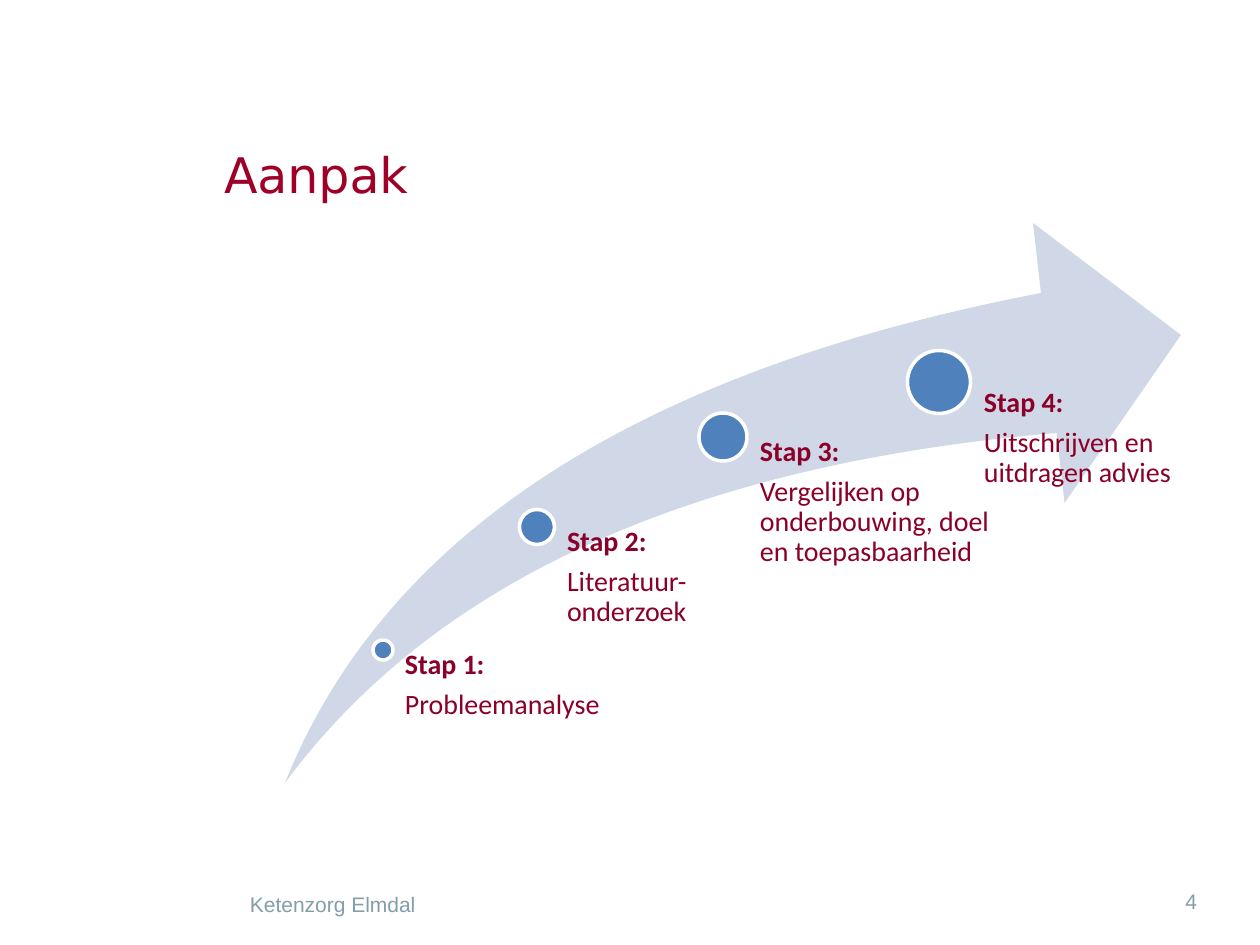
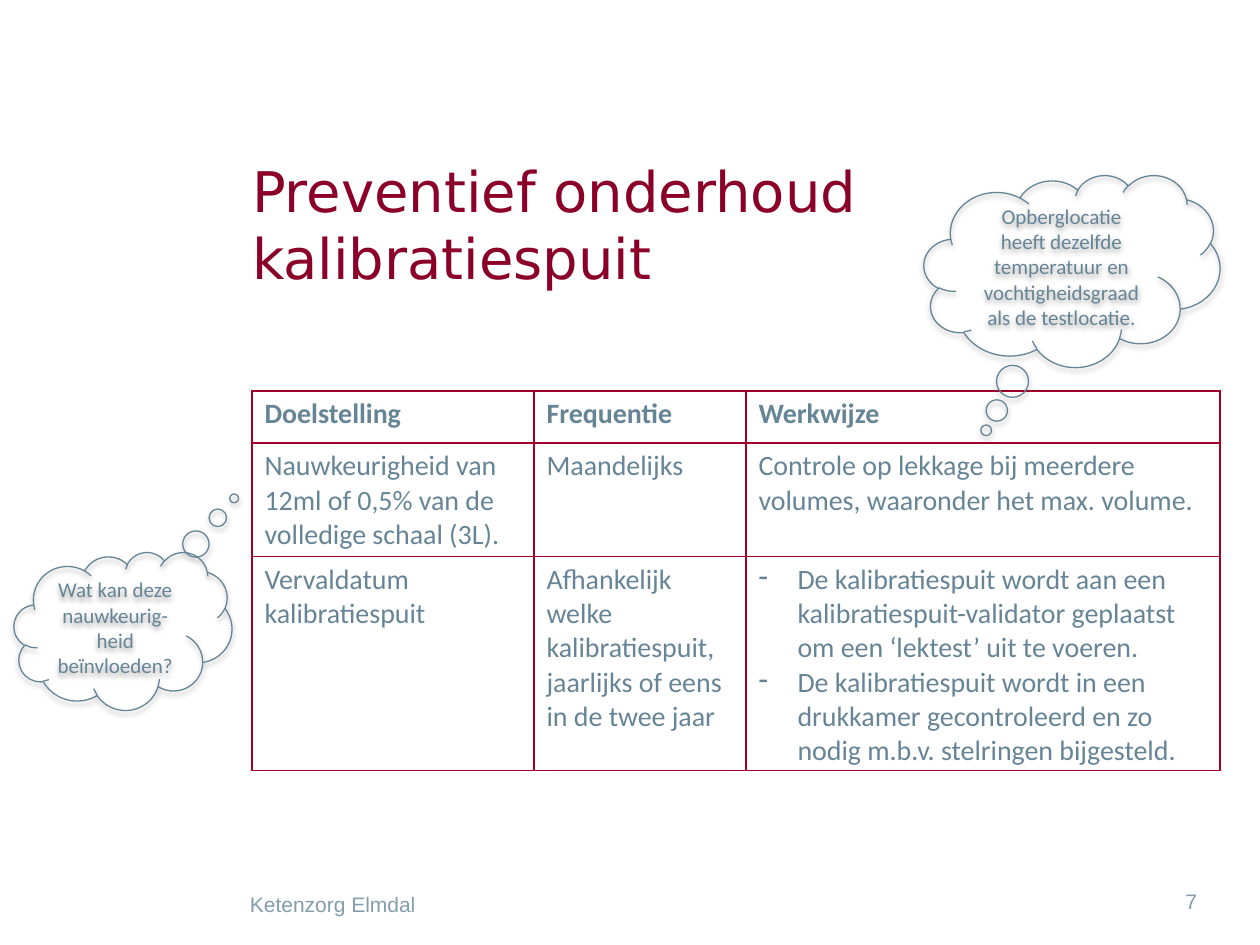
from lxml import etree
from pptx import Presentation
from pptx.dml.color import RGBColor
from pptx.enum.shapes import MSO_SHAPE
from pptx.enum.text import MSO_ANCHOR, MSO_AUTO_SIZE, PP_ALIGN
from pptx.oxml.ns import qn
from pptx.util import Emu, Pt

CRIMSON = RGBColor(0x9E, 0x00, 0x27)
WINE = RGBColor(0x8A, 0x00, 0x28)
SLATE = RGBColor(0x65, 0x85, 0x96)
FOOTER_GREY = RGBColor(0x82, 0x9D, 0xAB)
PALE_BLUE = RGBColor(0xD0, 0xD8, 0xE8)
DOT_BLUE = RGBColor(0x4F, 0x81, 0xBD)
WHITE = RGBColor(0xFF, 0xFF, 0xFF)

TITLE_FONT, BODY_FONT, FOOTER_FONT = "DejaVu Sans", "Calibri", "Arial"
TITLE_ONLY = 5
FOOTER = "Ketenzorg Elmdal"


def px(length):
    return Emu(round(length * 914400 / 126))


def box_emu(*box):
    return [px(length) for length in box]


def write(frame, *lines, size=16, font=BODY_FONT, color=SLATE, bold=False,
          bold_lead=False, align=PP_ALIGN.LEFT, anchor=MSO_ANCHOR.TOP,
          insets=None, spacing=None, after=None, dash_indent=None):
    """Fill a text frame, one paragraph per line; insets are in px."""
    frame.word_wrap = True
    frame.vertical_anchor = anchor
    if insets:
        (frame.margin_left, frame.margin_top,
         frame.margin_right, frame.margin_bottom) = box_emu(*insets)
    for index, line in enumerate(lines):
        paragraph = frame.add_paragraph() if index else frame.paragraphs[0]
        paragraph.text = line
        paragraph.alignment = align
        if spacing:
            paragraph.line_spacing = spacing
        if after:
            paragraph.space_after = after
        if dash_indent:
            properties = paragraph._p.get_or_add_pPr()
            properties.set("marL", str(px(dash_indent)))
            properties.set("indent", str(-px(dash_indent)))
            etree.SubElement(properties, qn("a:buChar"), char="-")
        for run in paragraph.runs:
            run.font.size = Pt(size)
            run.font.name = font
            run.font.color.rgb = color
            run.font.bold = bold or (bold_lead and index == 0)


def add_text(slide, box, *lines, **text_format):
    frame = slide.shapes.add_textbox(*box_emu(*box)).text_frame
    write(frame, *lines, **{"insets": (0, 0, 0, 0), **text_format})


def add_preset(slide, preset, box, fill=None, line=None, line_width=1):
    shape = slide.shapes.add_shape(preset, *box_emu(*box))
    shape.shadow.inherit = False
    if fill is None:
        shape.fill.background()
    else:
        shape.fill.solid()
        shape.fill.fore_color.rgb = fill
    if line is None:
        shape.line.fill.background()
    else:
        shape.line.color.rgb = line
        shape.line.width = Pt(line_width)
    return shape


def start_slide(deck, title, title_box, number, **title_format):
    """Title, footer and slide number."""
    slide = deck.slides.add_slide(deck.slide_layouts[TITLE_ONLY])
    heading = slide.shapes.title
    heading.left, heading.top, heading.width, heading.height = box_emu(*title_box)
    heading.text_frame.auto_size = MSO_AUTO_SIZE.NONE
    write(heading.text_frame, title, font=TITLE_FONT, insets=(0, 0, 0, 0),
          **title_format)
    footer_format = dict(size=12, font=FOOTER_FONT, color=FOOTER_GREY,
                         anchor=MSO_ANCHOR.MIDDLE)
    add_text(slide, (250, 879, 328, 50), FOOTER, **footer_format)
    add_text(slide, (903, 876, 294, 50), number, align=PP_ALIGN.RIGHT,
             **footer_format)
    return slide


def add_roadmap(slide, box, steps):
    """Swoosh arrow with growing dots, each with its step text."""
    left, top, width, height = box
    swoosh = add_preset(slide, MSO_SHAPE.from_xml("swooshArrow"), box, PALE_BLUE)
    swoosh.adjustments[0] = swoosh.adjustments[1] = 0.25
    for number, (x, y, diameter, text_drop, text_width, text) in enumerate(steps, 1):
        radius = diameter / 2
        add_preset(slide, MSO_SHAPE.OVAL,
                   (left + x - radius, top + y - radius, diameter, diameter),
                   DOT_BLUE, WHITE, 2)
        text_top = y + text_drop
        add_text(slide,
                 (left + x + 11, top + text_top, text_width, height - text_top),
                 f"Stap {number}:", text, color=WINE, bold_lead=True,
                 insets=(round(diameter * 0.54), 0, 0, 0),
                 spacing=0.9, after=Pt(5.6))


def border_cell(cell, color, width):
    properties = cell._tc.get_or_add_tcPr()
    for position, side in enumerate(("a:lnL", "a:lnR", "a:lnT", "a:lnB")):
        border = etree.Element(qn(side), w=str(Pt(width)))
        fill = etree.SubElement(border, qn("a:solidFill"))
        etree.SubElement(fill, qn("a:srgbClr"), val=str(color))
        properties.insert(position, border)


def add_maintenance_table(slide, left, top, columns, heights, rows):
    table = slide.shapes.add_table(
        len(rows), len(columns),
        *box_emu(left, top, sum(columns), sum(heights))).table
    table.first_row = table.horz_banding = False
    for column, width in zip(table.columns, columns):
        column.width = px(width)
    for row, height in zip(table.rows, heights):
        row.height = px(height)
    for r, row in enumerate(rows):
        for c, content in enumerate(row):
            cell = table.cell(r, c)
            cell.fill.background()
            border_cell(cell, CRIMSON, 1)
            is_list = isinstance(content, list)
            write(cell.text_frame, *(content if is_list else [content]),
                  bold=r == 0, dash_indent=39 if is_list else None)


def add_thought(slide, box, tail, text):
    """Thought cloud with a soft shadow; tail is relative to its centre."""
    cloud = add_preset(slide, MSO_SHAPE.CLOUD_CALLOUT, box, line=SLATE,
                       line_width=0.75)
    cloud.adjustments[0], cloud.adjustments[1] = tail
    effects = cloud._element.spPr.find(qn("a:effectLst"))
    shadow = etree.SubElement(effects, qn("a:outerShdw"), blurRad=str(Pt(3.1)),
                              dist=str(Pt(1.8)), dir="5400000", rotWithShape="0")
    shade = etree.SubElement(shadow, qn("a:srgbClr"), val="000000")
    etree.SubElement(shade, qn("a:alpha"), val="35000")
    write(cloud.text_frame, text, size=12, align=PP_ALIGN.CENTER,
          anchor=MSO_ANCHOR.MIDDLE)


def build_approach(deck):
    slide = start_slide(deck, "Aanpak", (224, 154, 1008, 71), "4",
                        size=28, color=CRIMSON, spacing=Pt(28))
    # Dot centre x and y, diameter, text drop, text width, text
    steps = [
        (98, 427, 20, 0, 238, "Probleemanalyse"),
        (252, 304, 35, 0, 286, "Literatuur-\nonderzoek"),
        (438, 214, 48, 0, 267, "Vergelijken op onderbouwing, doel en toepasbaarheid"),
        (654, 159, 63, 6, 226, "Uitschrijven en uitdragen advies"),
    ]
    add_roadmap(slide, (285, 223, 896, 560), steps)


def build_maintenance(deck):
    slide = start_slide(deck, "Preventief onderhoud\nkalibratiespuit",
                        (252, 156, 931, 158), "7", size=32, color=WINE)
    rows = [
        ["Doelstelling", "Frequentie", "Werkwijze"],
        ["Nauwkeurigheid van 12ml of 0,5% van de volledige schaal (3L).",
         "Maandelijks",
         "Controle op lekkage bij meerdere volumes, waaronder het max. volume."],
        ["Vervaldatum kalibratiespuit",
         "Afhankelijk welke kalibratiespuit, jaarlijks of eens in de twee jaar",
         ["De kalibratiespuit wordt aan een kalibratiespuit-validator geplaatst "
          "om een ‘lektest’ uit te voeren.",
          "De kalibratiespuit wordt in een drukkamer gecontroleerd en zo nodig "
          "m.b.v. stelringen bijgesteld."]],
    ]
    add_maintenance_table(slide, 252, 391, (282, 212, 474), (52, 113, 214), rows)
    add_thought(slide, (14, 552, 218, 158), (0.51, -0.84),
                "Wat kan deze nauwkeurig-heid beïnvloeden?")
    add_thought(slide, (924, 175, 296, 192), (-0.29, 0.83),
                "Opberglocatie heeft dezelfde temperatuur en vochtigheidsgraad "
                "als de testlocatie.")


def main():
    deck = Presentation()
    deck.slide_width, deck.slide_height = px(1260), px(945)
    build_approach(deck)
    build_maintenance(deck)
    deck.save("out.pptx")


if __name__ == "__main__":
    main()
